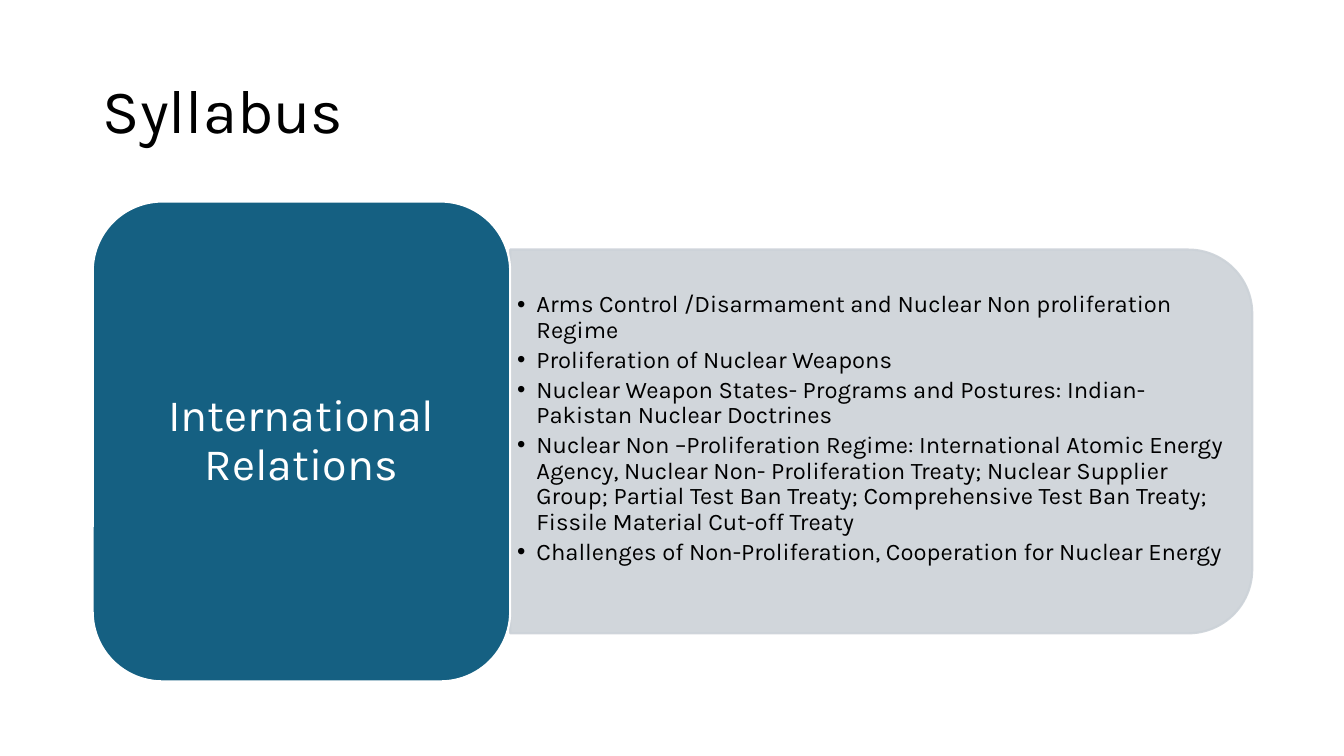
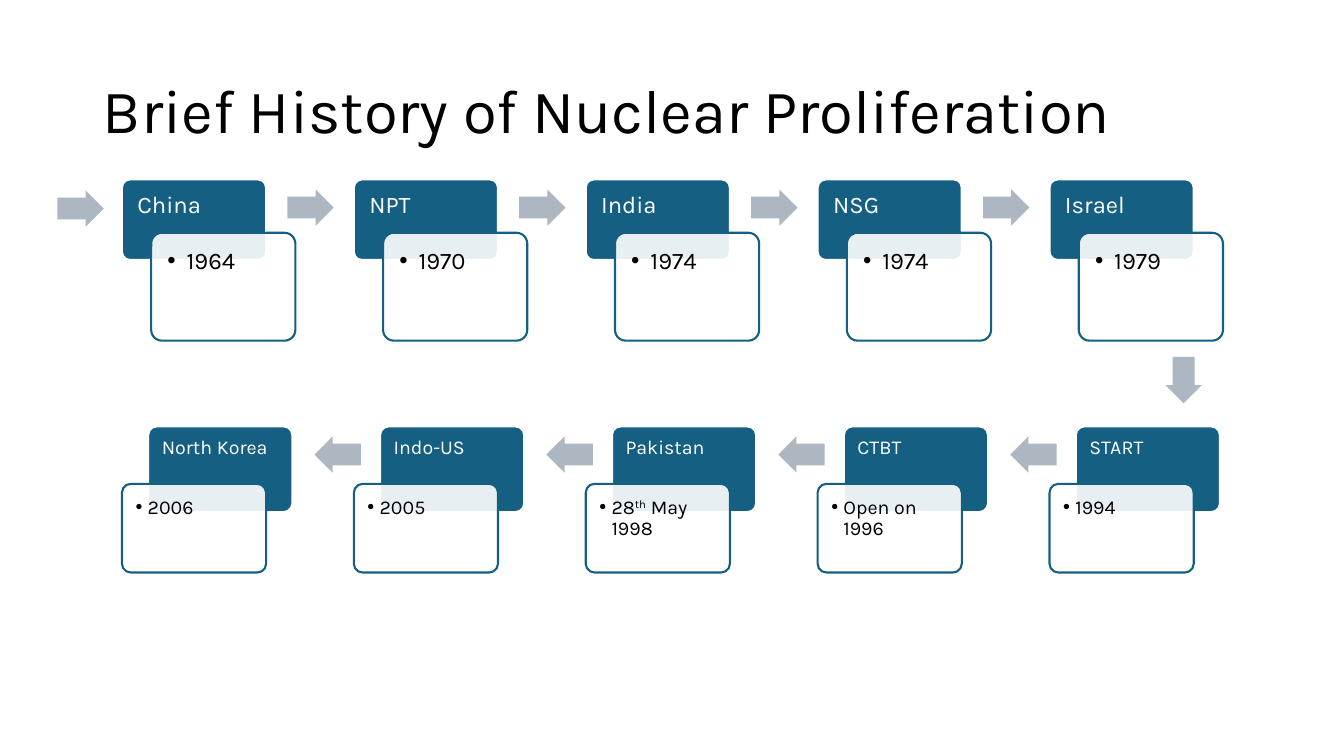
from pptx import Presentation
from pptx.dml.color import RGBColor
from pptx.enum.shapes import MSO_SHAPE
from pptx.enum.text import MSO_ANCHOR, MSO_AUTO_SIZE, PP_ALIGN
from pptx.oxml.ns import qn
from pptx.util import Inches, Pt
from lxml.etree import SubElement

FONT = "Karla"
BLUE, PALE, GREY = "156082", "CCD2D8", "ACB7C1"
WHITE, BLACK = "FFFFFF", "000000"
TOPICS = [
    "Arms Control /Disarmament and Nuclear Non proliferation Regime",
    "Proliferation of Nuclear Weapons",
    "Nuclear Weapon States- Programs and Postures: Indian-Pakistan Nuclear Doctrines",
    "Nuclear Non –Proliferation Regime: International Atomic Energy Agency, "
    "Nuclear Non- Proliferation Treaty; Nuclear Supplier Group; Partial Test Ban "
    "Treaty; Comprehensive Test Ban Treaty; Fissile Material Cut-off Treaty",
    "Challenges of Non-Proliferation, Cooperation for Nuclear Energy",
]
# Both rows are listed from left to right.
EARLY = [("China", "1964"), ("NPT", "1970"), ("India", "1974"),
         ("NSG", "1974"), ("Israel", "1979")]
LATE = [("North Korea", "2006"), ("Indo-US", "2005"),
        ("Pakistan", "28^th^ May 1998"), ("CTBT", "Open on 1996"),
        ("START", "1994")]
LEFT, STEP, WIDE = 1.21, 2.3, 1.43


def paint(color, value):
    """Give a fill or font colour format a hex colour."""
    color.rgb = RGBColor.from_string(value)


def place(item, box):
    item.left, item.top, item.width, item.height = map(Inches, box)


def bullet(para, indent):
    """Hang the paragraph on a round bullet."""
    props = para._p.get_or_add_pPr()
    props.set("marL", str(Inches(indent)))
    props.set("indent", str(-Inches(indent)))
    SubElement(props, qn("a:buFont")).set("typeface", "Arial")
    SubElement(props, qn("a:buChar")).set("char", "•")


def write(item, *lines, size=17, color=BLACK, align=PP_ALIGN.LEFT,
          anchor=MSO_ANCHOR.TOP, inset=(0.1, 0.05, 0.1, 0.05),
          indent=0, after=0):
    """Fill an item with paragraphs; text between ^ marks is superscript."""
    frame = item.text_frame
    frame.word_wrap = True
    frame.auto_size = MSO_AUTO_SIZE.NONE
    frame.vertical_anchor = anchor
    (frame.margin_left, frame.margin_top,
     frame.margin_right, frame.margin_bottom) = map(Inches, inset)
    for i, line in enumerate(lines):
        para = frame.add_paragraph() if i else frame.paragraphs[0]
        para.alignment, para.line_spacing = align, 0.9
        para.space_before, para.space_after = Pt(0), Pt(after)
        if indent:
            bullet(para, indent)
        for j, part in enumerate(line.split("^")):
            run = para.add_run()
            run.text = part
            run.font.name, run.font.size = FONT, Pt(size)
            paint(run.font.color, color)
            if j % 2:
                run._r.get_or_add_rPr().set("baseline", "30000")


def draw(slide, kind, box, fill, line=None, adjust=(), fade=0):
    """Add a shape; fade tells how many colours (fill, line) are 90% opaque."""
    item = slide.shapes.add_shape(kind, *map(Inches, box))
    item.shadow.inherit = False
    item.fill.solid()
    paint(item.fill.fore_color, fill)
    if line:
        paint(item.line.color, line)
        item.line.width = Pt(1.5)
    else:
        item.line.fill.background()
    for i, value in enumerate(adjust):
        item.adjustments[i] = value
    tints = list(item._element.spPr.iter(qn("a:srgbClr")))
    for tint in tints[:fade]:
        SubElement(tint, qn("a:alpha")).set("val", "90000")
    return item


def start(deck, layout, title):
    """Add a slide with the shared title style."""
    slide = deck.slides.add_slide(deck.slide_layouts[layout])
    place(slide.shapes.title, (0.92, 0.4, 11.5, 1.45))
    write(slide.shapes.title, title, size=44, anchor=MSO_ANCHOR.MIDDLE)
    return slide


def topic(slide, box, name, points):
    """Place a name block with its panel of points to the right."""
    x, y, w, h = box
    split = 4.14
    long, tall = w - split, h * 0.8
    mid_x, mid_y = x + split + long / 2, y + h / 2
    panel = draw(slide, MSO_SHAPE.ROUND_2_SAME_RECTANGLE,
                 (mid_x - tall / 2, mid_y - long / 2, tall, long),
                 PALE, PALE, fade=2)
    panel.rotation = 90
    body = slide.placeholders[1]
    place(body, (x + split, y + 0.66, long - 0.19, h - 1.32))
    write(body, *points, anchor=MSO_ANCHOR.MIDDLE, indent=0.19, after=2.8,
          inset=(0.07, 0.04, 0.07, 0.29))
    slide.shapes._spTree.append(body._element)
    block = draw(slide, MSO_SHAPE.ROUNDED_RECTANGLE, (x, y, split, h),
                 BLUE, WHITE)
    write(block, name, size=32, color=WHITE, align=PP_ALIGN.CENTER,
          anchor=MSO_ANCHOR.MIDDLE, inset=(0.13, 0.07, 0.13, 0.07))


def arrow(slide, kind, x, y, w=0.46, h=0.36):
    draw(slide, kind, (x, y, w, h), GREY, adjust=(0.6, 0.5))


def row(slide, top, cards, kind, head, note, gap, size, indent, inset):
    """Place a row of cards; head and note are (shift, drop, height)."""
    for i, (name, date) in enumerate(cards):
        x = LEFT + i * STEP
        for text, (shift, drop, high), fill, line, ink in (
                (name, head, BLUE, WHITE, WHITE),
                (date, note, WHITE, BLUE, BLACK)):
            is_note = text is date
            item = draw(slide, MSO_SHAPE.ROUNDED_RECTANGLE,
                        (x + shift, top + drop, WIDE, high), fill, line,
                        adjust=(0.1,), fade=int(is_note))
            pad = (inset,) * 4 if is_note else (inset, inset - 0.02, 0.1, 0.05)
            write(item, text, size=size, color=ink, inset=pad,
                  indent=indent if is_note else 0)
        if i < len(cards) - 1:
            arrow(slide, kind, x + gap, top + 0.1)


def main():
    deck = Presentation()
    deck.slide_width, deck.slide_height = Inches(13.33), Inches(7.5)

    slide = start(deck, 1, "Syllabus")
    topic(slide, (0.92, 2, 11.5, 4.76), "International Relations", TOPICS)

    slide = start(deck, 5, "Brief History of Nuclear Proliferation")
    arrow(slide, MSO_SHAPE.RIGHT_ARROW, 0.57, 1.89)
    row(slide, 1.78, EARLY, MSO_SHAPE.RIGHT_ARROW, head=(0, 0, 0.8),
        note=(0.29, 0.53, 1.07), gap=1.64, size=17, indent=0.19, inset=0.13)
    arrow(slide, MSO_SHAPE.DOWN_ARROW, 11.56, 3.54, 0.36, 0.46)
    row(slide, 4.23, LATE, MSO_SHAPE.LEFT_ARROW, head=(0.26, 0, 0.85),
        note=(0, 0.57, 0.88), gap=1.91, size=14, indent=0.12, inset=0.11)

    deck.save("out.pptx")


if __name__ == "__main__":
    main()
